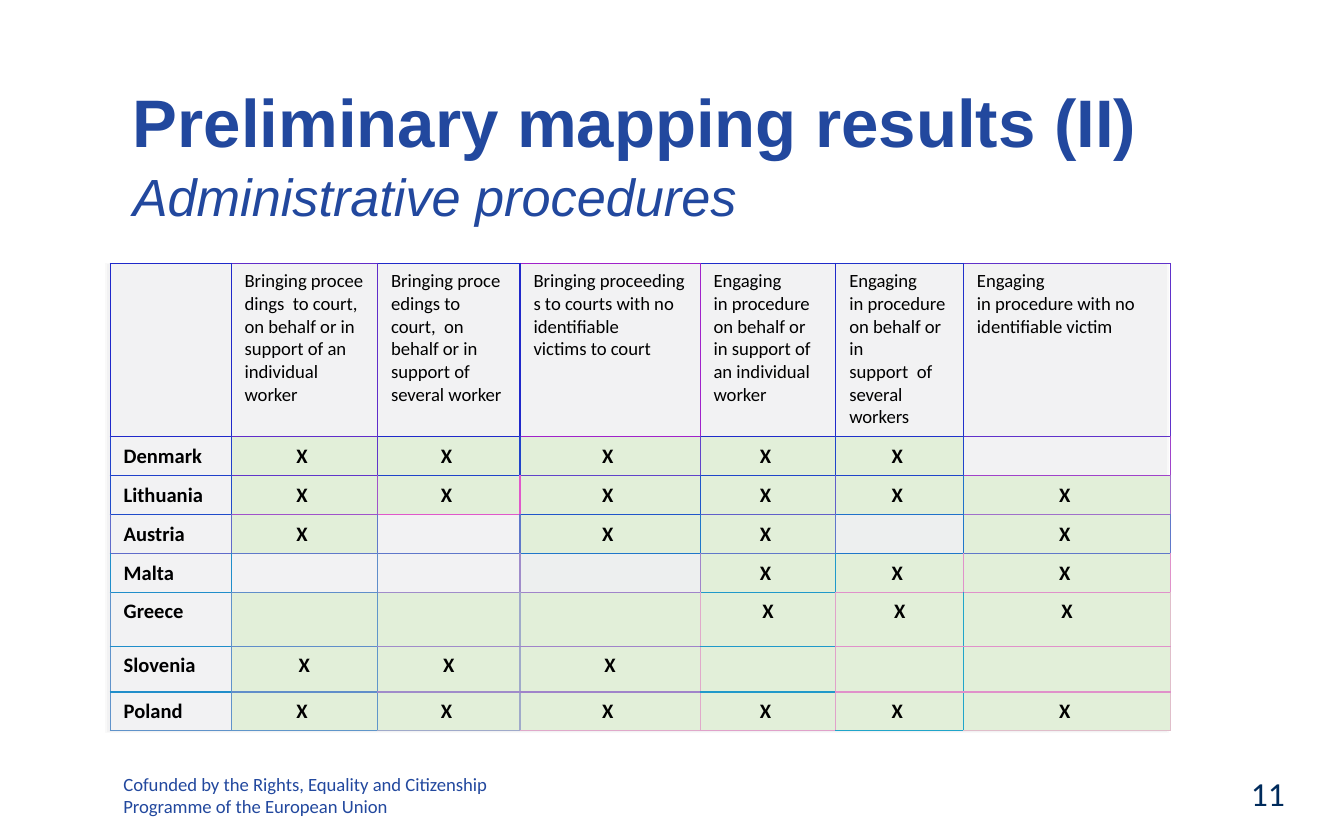
import pptx
import pptx.util
import pptx.dml.color
import pptx.enum.shapes
import pptx.enum.text
from lxml import etree

Inches, Pt = pptx.util.Inches, pptx.util.Pt
ALIGN = pptx.enum.text.PP_ALIGN
COLORS = {"blue": "22489E", "navy": "002B5C", "black": "000000", "panel": "F2F2F3",
          "panel_line": "F9F9F9", "green": "E2EFD9", "gray": "EDEFEF"}
NBSP = chr(160)  # written as ~ in the headers

# Content
HEADERS = [
    "",
    "Bringing~proceedings~~to court, on behalf or in support of an individual worker~",
    "Bringing~proceedings~to court,~~on behalf or in support of several worker~",
    "Bringing~proceedings~to courts~with no identifiable victims~to court~",
    "Engaging in~procedure~on behalf or in support of an individual worker~~~",
    "Engaging in~procedure on behalf or in support~~of several workers~",
    "Engaging in~procedure~with no identifiable victim~~",
]
# Country, then per column: X = marked, g = green, e = gray, . = no fill
COUNTRIES = [
    ("Denmark", "XXXXX."),
    ("Lithuania", "XXXXXX"),
    ("Austria", "X.XXeX"),
    ("Malta", "..eXXX"),
    ("Greece", "gggXXX"),
    ("Slovenia", "XXXggg"),
    ("Poland", "XXXXXX"),
]
UNPADDED = ("Greece", "Slovenia")
COL_WIDTHS = [0.9, 1.09, 1.06, 1.34, 1.01, 0.95, 1.54]
ROW_HEIGHTS = [1.29, 0.29, 0.29, 0.29, 0.29, 0.4, 0.34, 0.29]

# Border colours: right and bottom of each cell, one line per table row
BORDERS = [line.split() for line in (
    "2029CA 602DCA 2029CA A022CA 202BCA 2032CA 6032CA",
    "2040CA 6035CA 2043CA 6043CA 2045CA 2044CA A042CA",
    "204BCA A052CA E058CA 2055CA 605FCA 2071CA A070CA",
    "606BCA 6079CA 6078CA 2076CA 6078CA 2077CA 6078CA",
    "208ECA 608ECA A08CCA A084CA 2099CA E091CA E091CA",
    "6093CA 6096CA A0AACA E0A9CA E0A2CA 20A5CA E0BECA",
)]
SIDES = BORDERS[:5] + [BORDERS[5]] * 3
EDGES = [BORDERS[0]] + BORDERS[:5] + [BORDERS[4]] * 2 + [BORDERS[5]]


def rgb(value):
    return pptx.dml.color.RGBColor.from_string(value)


def style(p, font, size, color, align, bold=False, italic=False):
    p.alignment = align
    p.font.name, p.font.size = font, Pt(size)
    for r in p.runs:
        r.font.name, r.font.size = font, Pt(size)
        r.font.bold, r.font.italic = bold, italic
        r.font.color.rgb = rgb(color)


def add_text(s, box, text, *look, **flags):
    tf = s.shapes.add_textbox(*map(Inches, box)).text_frame
    tf.word_wrap = True
    tf.text = text
    style(tf.paragraphs[0], *look, **flags)


def set_borders(cell, colors):
    """Draw left, right, top and bottom; these precede the fill in a:tcPr."""
    props = cell._tc.get_or_add_tcPr()
    ns = "{http://schemas.openxmlformats.org/drawingml/2006/main}"
    for i, (tag, color) in enumerate(zip(("lnL", "lnR", "lnT", "lnB"), colors)):
        ln = etree.Element(ns + tag, w=str(Pt(0.75)))
        fill = etree.SubElement(ln, ns + "solidFill")
        etree.SubElement(fill, ns + "srgbClr", val=color)
        props.insert(i, ln)


def add_mapping_table(s):
    rows = [HEADERS] + [[name, *marks] for name, marks in COUNTRIES]
    frame = s.shapes.add_table(len(rows), len(COL_WIDTHS), Inches(0.82), Inches(1.96),
                               Inches(sum(COL_WIDTHS)), Inches(sum(ROW_HEIGHTS)))
    table = frame.table
    table.first_row = table.horz_banding = False
    for col, width in zip(table.columns, COL_WIDTHS):
        col.width = Inches(width)
    for row, height in zip(table.rows, ROW_HEIGHTS):
        row.height = Inches(height)

    for i, row in enumerate(rows):
        pad = "" if row[0] in UNPADDED else NBSP
        for j, value in enumerate(row):
            cell = table.cell(i, j)
            fill, text, align = None, value + pad, ALIGN.JUSTIFY
            if i == 0:
                text, align = value.replace("~", NBSP), ALIGN.LEFT
            elif j > 0:
                fill = {"X": "green", "g": "green", "e": "gray"}.get(value)
                text, align = "X" + pad if value == "X" else "", ALIGN.CENTER
            if fill:
                cell.fill.solid()
                cell.fill.fore_color.rgb = rgb(COLORS[fill])
            else:
                cell.fill.background()
            cell.text_frame.text = text
            style(cell.text_frame.paragraphs[0], "Calibri", 11 if i else 10,
                  COLORS["black"], align, bold=i > 0)
            set_borders(cell, (SIDES[i][max(j - 1, 0)], SIDES[i][j],
                               EDGES[i][j], EDGES[i + 1][j]))


def main():
    prs = pptx.Presentation()
    prs.slide_width, prs.slide_height = Inches(10), Inches(6.25)
    s = prs.slides.add_slide(prs.slide_layouts[6])

    # Panel behind the table
    panel = s.shapes.add_shape(pptx.enum.shapes.MSO_SHAPE.RECTANGLE,
                               *map(Inches, (0.79, 1.96, 7.9, 3.49)))
    panel.shadow.inherit = False
    panel.fill.solid()
    panel.fill.fore_color.rgb = rgb(COLORS["panel"])
    panel.line.color.rgb = rgb(COLORS["panel_line"])
    panel.line.width = Pt(0.75)

    # Footer, title, subtitle
    add_text(s, (0.82, 5.7, 2.96, 0.44),
             "Cofunded by the Rights, Equality and Citizenship Programme of the European Union",
             "Calibri", 10, COLORS["blue"], ALIGN.LEFT)
    add_text(s, (0.89, 0.55, 8.21, 1.17), "Preliminary mapping results (II)",
             "Arial", 36, COLORS["blue"], ALIGN.JUSTIFY, bold=True)
    add_text(s, (0.89, 1.17, 8.21, 1.17), "Administrative procedures",
             "Arial", 28, COLORS["blue"], ALIGN.JUSTIFY, italic=True)

    add_mapping_table(s)

    # Page number
    add_text(s, (7.33, 5.7, 2.33, 0.49), "11", "Calibri", 18, COLORS["navy"], ALIGN.RIGHT)
    prs.save("out.pptx")


if __name__ == "__main__":
    main()
